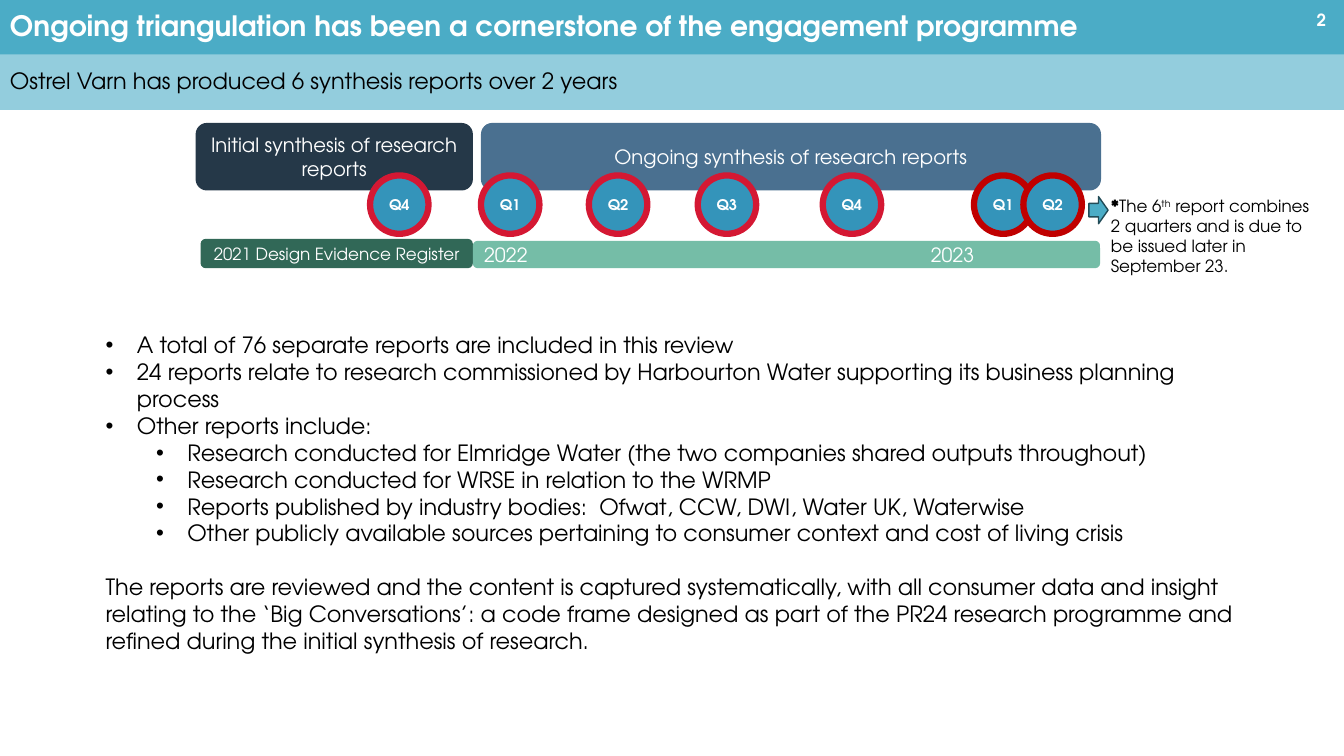
from dataclasses import dataclass

from lxml import etree
from pptx import Presentation
from pptx.dml.color import RGBColor
from pptx.enum.shapes import MSO_SHAPE
from pptx.enum.text import MSO_ANCHOR, MSO_AUTO_SIZE, PP_ALIGN
from pptx.oxml.ns import qn
from pptx.util import Inches, Pt

RECT = MSO_SHAPE.RECTANGLE
ROUND = MSO_SHAPE.ROUNDED_RECTANGLE
OVAL = MSO_SHAPE.OVAL
ARROW = MSO_SHAPE.RIGHT_ARROW
LEFT, CENTER, RIGHT = PP_ALIGN.LEFT, PP_ALIGN.CENTER, PP_ALIGN.RIGHT
MIDDLE, TOP = MSO_ANCHOR.MIDDLE, MSO_ANCHOR.TOP
GROW = MSO_AUTO_SIZE.SHAPE_TO_FIT_TEXT


@dataclass(frozen=True)
class Theme:
    font: str = "TeX Gyre Adventor"
    white: str = "FFFFFF"
    black: str = "000000"
    teal: str = "4BACC6"
    pale: str = "93CDDD"
    edge: str = "214B57"
    steel: str = "4A7090"
    navy: str = "253848"
    pine: str = "316857"
    mint: str = "75BDA7"
    blue: str = "3494BA"
    red: str = "D41833"
    dark: str = "C00000"
    title: float = 20
    body: float = 16
    label: float = 14
    note: float = 12
    badge: float = 10.5


class Deck:
    def __init__(self, theme, slide):
        self.theme = theme
        self.slide = slide

    def style(self, para, size, color, bold=False, align=LEFT):
        para.alignment = align
        for run in para.runs:
            run.font.name = self.theme.font
            run.font.size = Pt(size)
            run.font.bold = bold
            run.font.color.rgb = RGBColor.from_string(color)

    def shape(self, kind, box, fill, line=None, width=1):
        item = self.slide.shapes.add_shape(kind, *map(Inches, box))
        item.shadow.inherit = False
        item.fill.solid()
        item.fill.fore_color.rgb = RGBColor.from_string(fill)
        if line:
            item.line.color.rgb = RGBColor.from_string(line)
            item.line.width = Pt(width)
        else:
            item.line.fill.background()
        return item

    def label(self, item, text, size, color, bold=False, align=CENTER):
        frame = item.text_frame
        frame.word_wrap = True
        frame.vertical_anchor = MIDDLE
        frame.text = text
        para = frame.paragraphs[0]
        self.style(para, size, color, bold, align)
        return para

    def band(self, top, fill, text, size, color, bold=False):
        item = self.shape(RECT, (0, top, 13.33, 0.55), fill)
        self.label(item, text, size, color, bold, LEFT).line_spacing = 0.9

    def bar(self, box, fill, text, size, align=CENTER):
        item = self.shape(ROUND, box, fill)
        return self.label(item, text, size, self.theme.white, align=align)

    def badge(self, left, text, ring):
        item = self.shape(OVAL, (left, 1.74, 0.58, 0.58), self.theme.blue, ring, 4.5)
        frame = item.text_frame
        frame.margin_left = frame.margin_right = 0
        self.label(item, text, self.theme.badge, self.theme.white, True)

    def text(self, box):
        item = self.slide.shapes.add_textbox(*map(Inches, box))
        frame = item.text_frame
        frame.word_wrap = True
        frame.auto_size = GROW
        frame.vertical_anchor = TOP
        return item

    def bullet(self, para, level):
        para.level = level
        props = para._p.get_or_add_pPr()
        props.set("marL", str(Inches(0.31 + 0.5 * level)))
        props.set("indent", str(Inches(-0.31)))
        etree.SubElement(props, qn("a:buFont")).set("typeface", "Arial")
        etree.SubElement(props, qn("a:buChar")).set("char", "•")

    def tab(self, para, stop):
        stops = etree.SubElement(para._p.get_or_add_pPr(), qn("a:tabLst"))
        mark = etree.SubElement(stops, qn("a:tab"))
        mark.set("pos", str(Inches(stop)))
        mark.set("algn", "l")


POINTS = [
    (0, "A total of 76 separate reports are included in this review"),
    (0, "24 reports relate to research commissioned by Harbourton Water supporting its business planning process"),
    (0, "Other reports include:"),
    (1, "Research conducted for Elmridge Water (the two companies shared outputs throughout)"),
    (1, "Research conducted for WRSE in relation to the WRMP"),
    (1, "Reports published by industry bodies:  Ofwat, CCW, DWI, Water UK, Waterwise"),
    (1, "Other publicly available sources pertaining to consumer context and cost of living crisis"),
]
CLOSING = (
    "The reports are reviewed and the content is captured systematically, with all consumer data "
    "and insight relating to the ‘Big Conversations’: a code frame designed as part of the PR24 "
    "research programme and refined during the initial synthesis of research."
)


def main():
    show = Presentation()
    show.slide_width, show.slide_height = Inches(13.33), Inches(7.5)
    theme = Theme()
    deck = Deck(theme, show.slides.add_slide(show.slide_layouts[6]))

    deck.band(0, theme.teal, "Ongoing triangulation has been a cornerstone of the engagement programme",
              theme.title, theme.white, True)
    deck.band(0.54, theme.pale, "Ostrel Varn has produced 6 synthesis reports over 2 years",
              theme.body, theme.black)

    deck.bar((4.77, 1.22, 6.15, 0.67), theme.steel, "Ongoing synthesis of research reports", theme.label)
    deck.bar((1.94, 1.22, 2.75, 0.67), theme.navy, "Initial synthesis of research reports", theme.label)
    deck.bar((1.99, 2.37, 2.7, 0.29), theme.pine, "2021 Design Evidence Register", theme.note)
    years = deck.bar((4.69, 2.39, 6.22, 0.27), theme.mint, "2022\t2023", theme.label, LEFT)
    deck.tab(years, 4.43)

    for left, name, ring in [
        (3.67, "Q4", theme.red), (4.77, "Q1", theme.red), (5.84, "Q2", theme.red),
        (6.92, "Q3", theme.red), (8.16, "Q4", theme.red),
        (9.66, "Q1", theme.dark), (10.15, "Q2", theme.dark),
    ]:
        deck.badge(left, name, ring)

    frame = deck.text((0.95, 3.24, 11.43, 3.33)).text_frame
    frame.text = "\n".join([text for _, text in POINTS] + [CLOSING])
    for para, (level, _) in zip(frame.paragraphs, POINTS):
        deck.bullet(para, level)
    for para in frame.paragraphs:
        deck.style(para, theme.body, theme.black)
    frame.paragraphs[-1].space_before = Pt(19)

    note = deck.text((10.92, 1.89, 2.17, 0.91)).text_frame.paragraphs[0]
    for part in ("*", "The 6", "th",
                 " report combines 2 quarters and is due to be issued later in September 23."):
        note.add_run().text = part
    deck.style(note, theme.note, theme.black)
    note.runs[0].font.bold = True
    note.runs[2]._r.get_or_add_rPr().set("baseline", "30000")

    deck.shape(ARROW, (10.8, 1.95, 0.19, 0.27), theme.teal, theme.edge)
    page = deck.text((12.6, -0.03, 0.65, 0.45))
    page.text_frame.auto_size = MSO_AUTO_SIZE.NONE
    deck.label(page, "2", theme.note, theme.white, True, RIGHT)

    show.save("out.pptx")


if __name__ == "__main__":
    main()
